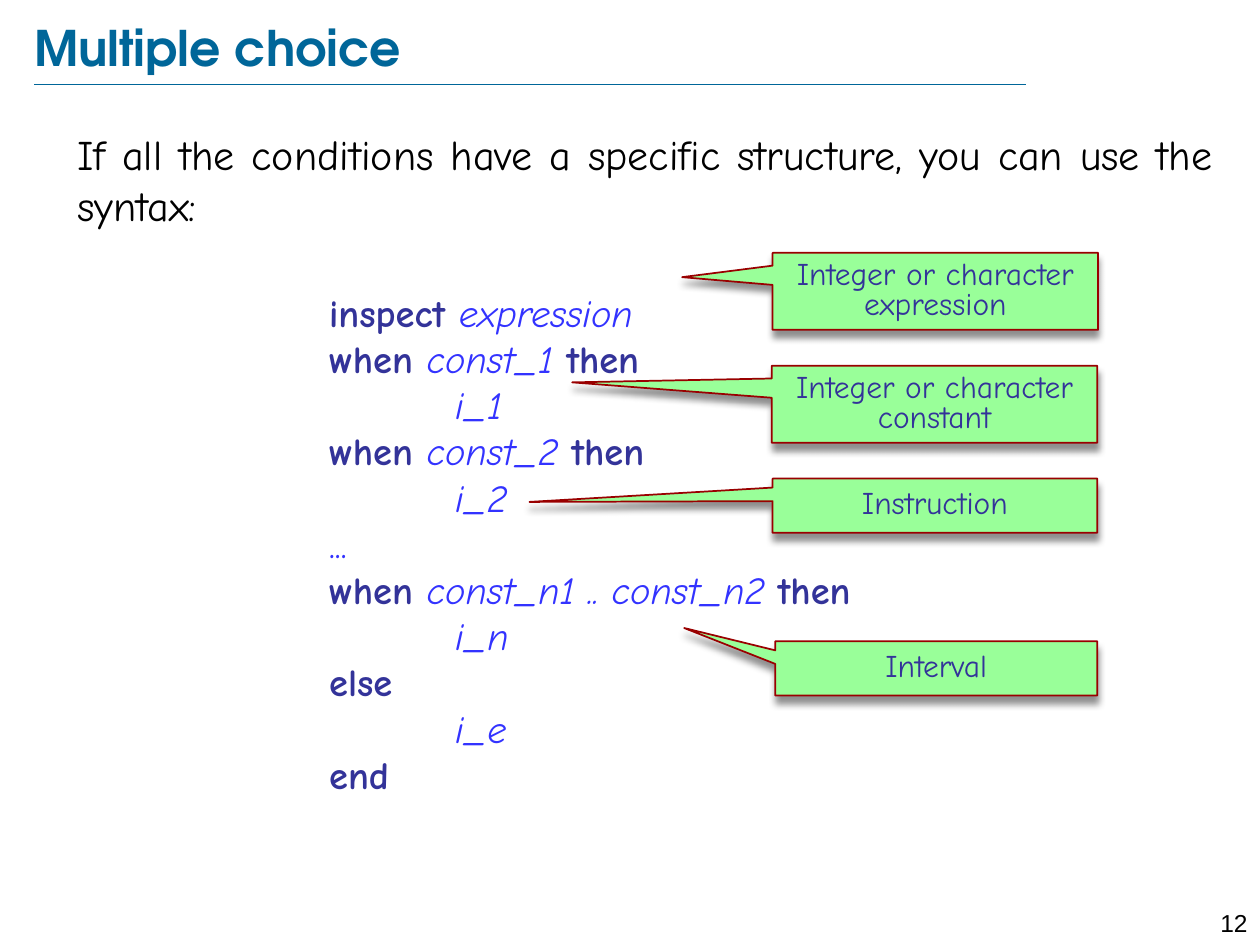
import lxml.etree
import pptx
import pptx.dml.color
import pptx.enum.shapes
import pptx.enum.text
import pptx.oxml.ns
import pptx.util
from dataclasses import dataclass

Pt = pptx.util.Pt
Align = pptx.enum.text.PP_ALIGN
Anchor = pptx.enum.text.MSO_ANCHOR
qn = pptx.oxml.ns.qn


@dataclass(frozen=True)
class Theme:
    title_font: str = "TeX Gyre Adventor"
    body_font: str = "Comic Neue"
    number_font: str = "Arial"
    title_size: float = 28
    intro_size: float = 24
    code_size: float = 22
    callout_size: float = 18
    number_size: float = 14
    heading: str = "006699"
    text: str = "000000"
    keyword: str = "333399"
    code: str = "3333FF"
    callout_fill: str = "99FF99"
    callout_line: str = "990000"


THEME = Theme()
CODE_INDENT = 144
CODE_STEP = 72

# Each code line: nesting level, then (kind, text) pairs
CODE_LINES = [
    (0, [("keyword", "inspect "), ("variable", "expression")]),
    (0, [("keyword", "when "), ("variable", "const_1 "), ("keyword", "then")]),
    (1, [("variable", "i_1")]),
    (0, [("keyword", "when "), ("variable", "const_2 "), ("keyword", "then")]),
    (1, [("variable", "i_2")]),
    (0, [("plain", "...")]),
    (0, [("keyword", "when "), ("variable", "const_n1 .. const_n2 "), ("keyword", "then")]),
    (1, [("variable", "i_n")]),
    (0, [("keyword", "else")]),
    (1, [("variable", "i_e")]),
    (0, [("keyword", "end")]),
]

# Each callout: text, (left, top, width, height), pointer offsets
CALLOUTS = [
    ("Integer or character expression", (441.5, 144.5, 186, 44), (-0.778, -0.184)),
    ("Integer or character constant", (441, 209, 186, 44), (-1.113, -0.283)),
    ("Instruction", (441.5, 273.5, 185.5, 31), (-1.249, -0.069)),
    ("Interval", (443, 366.5, 184, 31), (-0.783, -0.745)),
]


def rgb(value):
    return pptx.dml.color.RGBColor.from_string(value)


def set_font(font, name, size, color, bold=False):
    font.name, font.size, font.bold = name, Pt(size), bold
    font.color.rgb = rgb(color)


def set_margins(frame, side, vertical):
    frame.margin_left = frame.margin_right = Pt(side)
    frame.margin_top = frame.margin_bottom = Pt(vertical)


def add_text_box(slide, box, side=7.2, vertical=3.6):
    frame = slide.shapes.add_textbox(*map(Pt, box)).text_frame
    frame.word_wrap = True
    set_margins(frame, side, vertical)
    return frame


def add_title(slide):
    frame = add_text_box(slide, (19.5, 9.5, 625.5, 34.5), 0, 0)
    frame.vertical_anchor = Anchor.MIDDLE
    title = frame.paragraphs[0]
    title.text = "Multiple choice"
    set_font(title.font, THEME.title_font, THEME.title_size, THEME.heading, True)

    rule = slide.shapes.add_connector(
        pptx.enum.shapes.MSO_CONNECTOR.STRAIGHT, Pt(19.5), Pt(48), Pt(586.5), Pt(48))
    rule.line.color.rgb = rgb(THEME.heading)
    rule.line.width = Pt(0.25)
    lxml.etree.SubElement(rule._element.spPr, qn("a:effectLst"))


def add_code_line(frame, level, parts):
    line = frame.add_paragraph()
    line._p.get_or_add_pPr().set("marL", str(Pt(CODE_INDENT + level * CODE_STEP)))
    set_font(line.font, THEME.body_font, THEME.code_size, THEME.code)
    for kind, text in parts:
        run = line.add_run()
        run.text = text
        run.font.bold = kind == "keyword"
        run.font.italic = kind == "variable"
        run.font.color.rgb = rgb(THEME.keyword if kind == "keyword" else THEME.code)
    return line


def add_body(slide):
    frame = add_text_box(slide, (37, 70, 663, 413))
    intro = frame.paragraphs[0]
    intro.text = "If all the conditions have a specific structure, you can use the syntax:"
    intro.alignment = Align.JUSTIFY
    set_font(intro.font, THEME.body_font, THEME.intro_size, THEME.text)
    lines = [add_code_line(frame, level, parts) for level, parts in CODE_LINES]
    lines[0].space_before = Pt(34)


def add_shadow(shape):
    shape.shadow.inherit = False
    effects = shape._element.spPr.find(qn("a:effectLst"))
    shadow = lxml.etree.SubElement(
        effects, qn("a:outerShdw"), blurRad=str(Pt(4)), dist=str(Pt(4)),
        dir="5400000", algn="ctr", rotWithShape="0")
    color = lxml.etree.SubElement(shadow, qn("a:srgbClr"), val="000000")
    lxml.etree.SubElement(color, qn("a:alpha"), val="43000")


def add_callout(slide, text, box, pointer):
    callout = slide.shapes.add_shape(
        pptx.enum.shapes.MSO_SHAPE.RECTANGULAR_CALLOUT, *map(Pt, box))
    callout.adjustments[0], callout.adjustments[1] = pointer
    callout.fill.solid()
    callout.fill.fore_color.rgb = rgb(THEME.callout_fill)
    callout.line.color.rgb = rgb(THEME.callout_line)
    callout.line.width = Pt(1)
    add_shadow(callout)

    frame = callout.text_frame
    frame.word_wrap = True
    frame.vertical_anchor = Anchor.MIDDLE
    set_margins(frame, 0, 3.6)
    label = frame.paragraphs[0]
    label.text = text
    label.alignment = Align.CENTER
    label.line_spacing = 0.8
    set_font(label.font, THEME.body_font, THEME.callout_size, THEME.keyword)


def add_slide_number(slide):
    number = add_text_box(slide, (680.5, 515.5, 39.5, 17.5)).paragraphs[0]
    number.text = "12"
    number.alignment = Align.RIGHT
    set_font(number.font, THEME.number_font, THEME.number_size, THEME.text)


def main():
    deck = pptx.Presentation()
    deck.slide_width, deck.slide_height = Pt(720), Pt(540)
    slide = deck.slides.add_slide(deck.slide_layouts[6])
    add_title(slide)
    add_slide_number(slide)
    add_body(slide)
    for text, box, pointer in CALLOUTS:
        add_callout(slide, text, box, pointer)
    deck.save("out.pptx")


if __name__ == "__main__":
    main()
